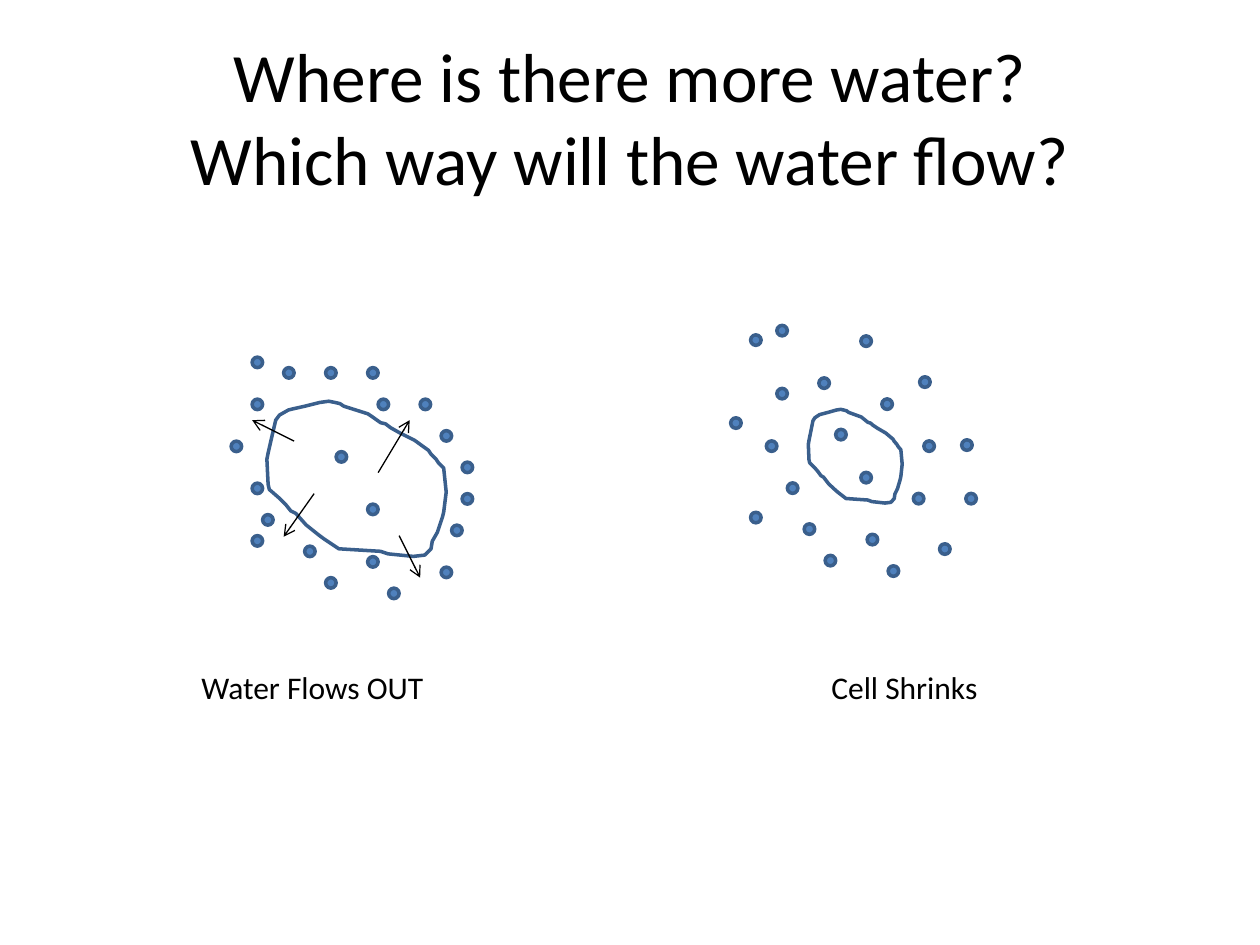
from dataclasses import dataclass

from lxml import etree
from pptx import Presentation
from pptx.dml.color import RGBColor
from pptx.enum.shapes import MSO_CONNECTOR, MSO_SHAPE
from pptx.enum.text import MSO_ANCHOR, MSO_AUTO_SIZE, PP_ALIGN
from pptx.oxml.ns import qn
from pptx.util import Cm, Pt

STRAIGHT = MSO_CONNECTOR.STRAIGHT
OVAL = MSO_SHAPE.OVAL
MIDDLE = MSO_ANCHOR.MIDDLE
FIXED = MSO_AUTO_SIZE.NONE
CENTER, LEFT = PP_ALIGN.CENTER, PP_ALIGN.LEFT
TITLE_ONLY = 5


@dataclass(frozen=True)
class Theme:
    """Colours, font and sizes of the slide."""
    text: RGBColor = RGBColor(0x00, 0x00, 0x00)
    cell: RGBColor = RGBColor(0xFF, 0xFF, 0xFF)
    water: RGBColor = RGBColor(0x4F, 0x81, 0xBD)
    outline: RGBColor = RGBColor(0x3A, 0x5F, 0x8C)
    font: str = "Calibri"
    title_size: float = 39.6
    caption_size: float = 18
    outline_width: float = 2
    arrow_width: float = 0.75


THEME = Theme()
DROP = Cm(2.54 / 12)

MEMBRANE_SPAN = (143, 124)
MEMBRANE = [
    (42, 1), (30, 4), (21, 6), (17, 7), (10, 11), (7, 15), (4, 28), (1, 41),
    (0, 46), (1, 66), (2, 70), (10, 77), (15, 82), (19, 87), (23, 89),
    (31, 98), (41, 106), (45, 109), (57, 117), (90, 119), (96, 121),
    (116, 123), (125, 122), (130, 117), (131, 111), (135, 104), (139, 92),
    (140, 88), (142, 72), (140, 53), (136, 49), (134, 46), (130, 42),
    (128, 39), (117, 31), (113, 29), (105, 25), (98, 21), (94, 18),
    (90, 17), (83, 12), (80, 10), (61, 4), (58, 2), (54, 1), (49, 0),
]

FLOWING_OUT = {
    "cell": (3.4, 4.2, 17.2, 14.9),
    "drops": [
        (10, 9), (13, 14), (2, 0), (9, 21), (15, 22), (7, 18), (20, 20),
        (21, 16), (3, 15), (2, 12), (13, 19), (22, 13), (2, 17), (0, 8),
        (14, 4), (20, 7), (2, 4), (22, 10), (13, 1), (5, 1), (9, 1), (18, 4),
    ],
    "flows": [
        (14, 11, 17, 6), (6, 8, 2, 6), (7.9, 13, 5, 17.1), (16, 17, 18, 21),
    ],
}
SHRUNKEN = {
    "cell": (7.4, 8, 9, 9),
    "drops": [
        (10, 9.9), (12.4, 14), (1.9, 0.9), (9, 21.9), (15, 22.9), (7, 18.9),
        (19.9, 20.8), (17.4, 16), (5.4, 15), (3.4, 11), (13, 19.9),
        (22.4, 16), (1.9, 17.8), (0, 8.8), (14.4, 7), (18.4, 11), (4.4, 6),
        (22, 10.9), (12.4, 1), (4.4, 0), (8.4, 5), (18, 4.9),
    ],
    "flows": [],
}


def write(frame, text, size, alignment):
    """Put one formatted paragraph in a text frame and return it."""
    frame.text = text
    paragraph = frame.paragraphs[0]
    paragraph.alignment = alignment
    for run in paragraph.runs:
        run.font.color.rgb = THEME.text
        for name, value in {"name": THEME.font, "size": Pt(size)}.items():
            setattr(run.font, name, value)
    return paragraph


def paint(shape, fill):
    """Give a shape its fill and the common outline."""
    shape.shadow.inherit = False
    shape.fill.solid()
    shape.fill.fore_color.rgb = fill
    shape.line.color.rgb = THEME.outline
    shape.line.width = Pt(THEME.outline_width)


def draw_membrane(slide, left, top, width, height):
    """Draw the cell outline stretched to the given box."""
    span_x, span_y = MEMBRANE_SPAN
    points = [(round(left + x * width / span_x), round(top + y * height / span_y))
              for x, y in MEMBRANE]
    builder = slide.shapes.build_freeform(*points[0])
    builder.add_line_segments(points[1:], close=True)
    paint(builder.convert_to_shape(), THEME.cell)


def draw_flow(slide, *ends):
    """Draw an arrow for water leaving the cell."""
    flow = slide.shapes.add_connector(STRAIGHT, *ends)
    flow.line.color.rgb = THEME.text
    flow.line.width = Pt(THEME.arrow_width)
    properties = flow.line._get_or_add_ln()
    etree.SubElement(properties, qn("a:tailEnd"), type="arrow")
    etree.SubElement(properties.getparent(), qn("a:effectLst"))


def draw_cell_scene(slide, left, top, scene):
    """Draw a cell, its water drops and flows on a grid of drop widths."""
    def place(x, y):
        return round(left + x * DROP), round(top + y * DROP)

    x, y, width, height = scene["cell"]
    draw_membrane(slide, *place(x, y), width * DROP, height * DROP)
    for drop in scene["drops"]:
        paint(slide.shapes.add_shape(OVAL, *place(*drop), DROP, DROP), THEME.water)
    for x1, y1, x2, y2 in scene["flows"]:
        draw_flow(slide, *place(x1, y1), *place(x2, y2))


def draw_title(slide, box):
    """Fill the title placeholder in the given box."""
    title = slide.shapes.title
    for name, value in zip(("left", "top", "width", "height"), box):
        setattr(title, name, value)
    frame = title.text_frame
    frame.auto_size = FIXED
    frame.vertical_anchor = MIDDLE
    write(frame, "Where is there more water?\vWhich way will the water flow?",
          THEME.title_size, CENTER)


def draw_captions(slide, box, second_stop):
    """Write both captions on one line, the second at a tab stop."""
    frame = slide.shapes.add_textbox(*box).text_frame
    frame.word_wrap = True
    line = write(frame, "Water Flows OUT\tCell Shrinks", THEME.caption_size, LEFT)
    stops = etree.SubElement(line._p.get_or_add_pPr(), qn("a:tabLst"))
    etree.SubElement(stops, qn("a:tab"), pos=str(second_stop), algn="l")


def main():
    """Build and save the slide."""
    deck = Presentation()
    deck.slide_width, deck.slide_height = Cm(25.4), Cm(19.05)
    slide = deck.slides.add_slide(deck.slide_layouts[TITLE_ONLY])
    draw_title(slide, (Cm(1.27), Cm(0.76), Cm(22.86), Cm(3.18)))
    draw_cell_scene(slide, Cm(4.66), Cm(7.2), FLOWING_OUT)
    draw_cell_scene(slide, Cm(14.73), Cm(6.56), SHRUNKEN)
    draw_captions(slide, (Cm(3.81), Cm(13.34), Cm(16.31), Cm(1.02)), Cm(12.7))
    deck.save("out.pptx")


if __name__ == "__main__":
    main()
